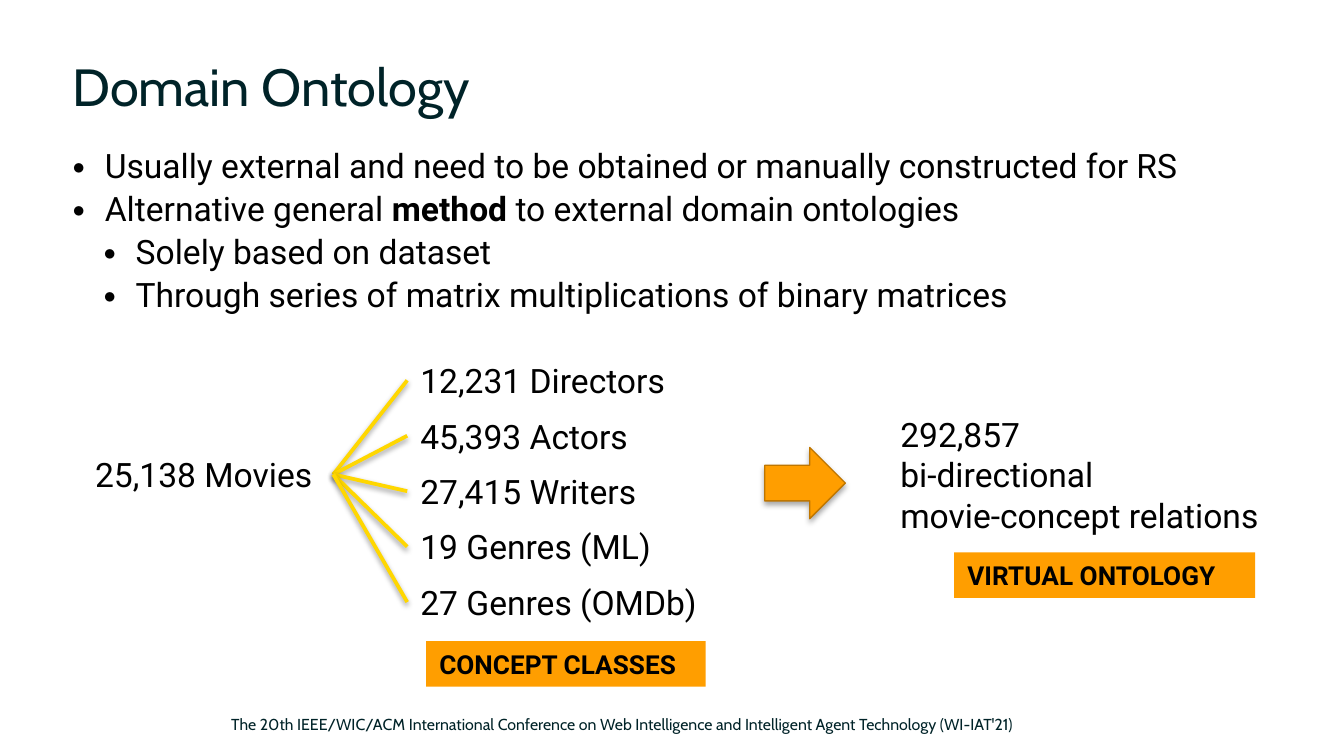
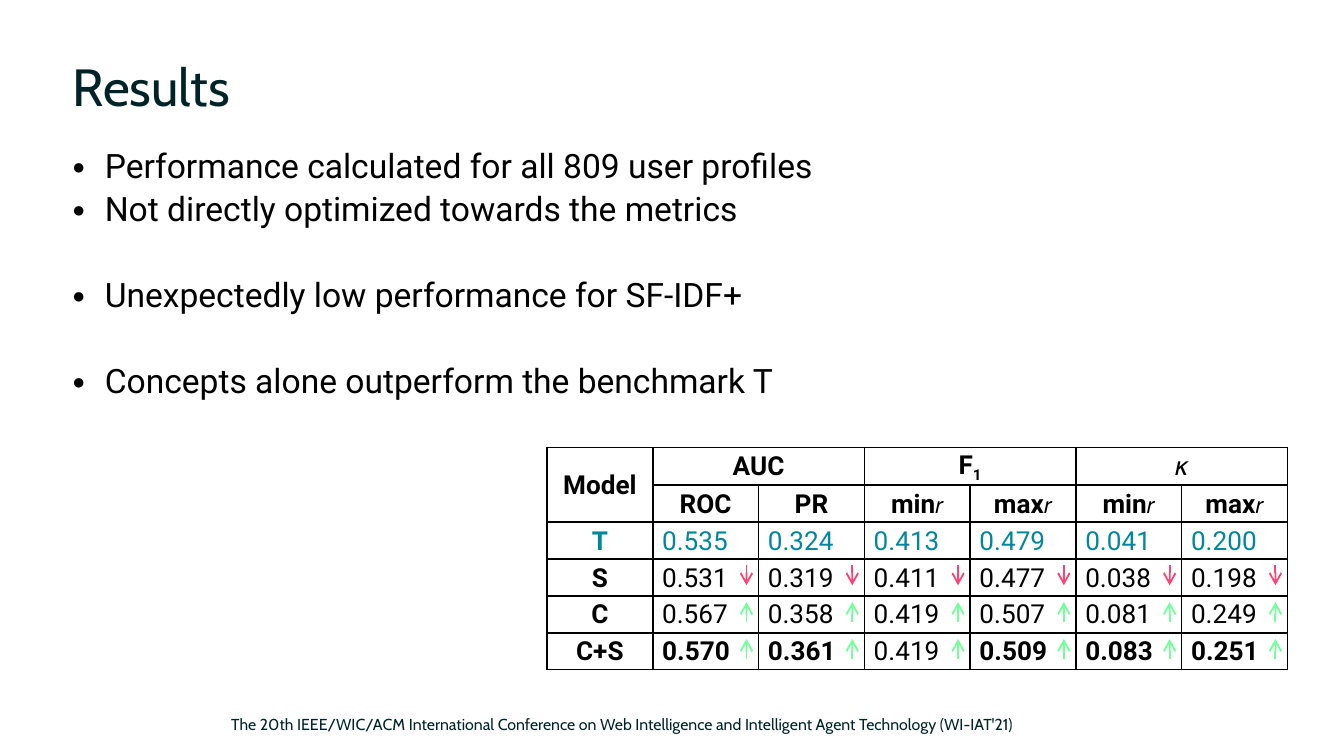
from dataclasses import dataclass

from lxml import etree
from pptx import Presentation
from pptx.dml.color import RGBColor
from pptx.enum.shapes import MSO_CONNECTOR, MSO_SHAPE
from pptx.enum.text import MSO_ANCHOR, PP_ALIGN
from pptx.oxml import parse_xml
from pptx.oxml.ns import nsdecls, qn
from pptx.util import Inches, Pt

STRAIGHT = MSO_CONNECTOR.STRAIGHT
RECT, RIGHT_ARROW = MSO_SHAPE.RECTANGLE, MSO_SHAPE.RIGHT_ARROW
LEFT, CENTER = PP_ALIGN.LEFT, PP_ALIGN.CENTER
TOP, MIDDLE = MSO_ANCHOR.TOP, MSO_ANCHOR.MIDDLE
SIDE_LEFT, SIDE_RIGHT = 1, 3


@dataclass(frozen=True)
class Theme:
    head_font: str = "Cabin"
    body_font: str = "Roboto"
    ink: str = "002328"
    black: str = "000000"
    orange: str = "FF9E00"
    orange_edge: str = "BF7600"
    gold: str = "FFD700"
    teal: str = "00879E"
    worse: str = "FB4476"
    better: str = "74FF9B"
    title: float = 28
    body: float = 18
    label: float = 14
    index: float = 12
    footer: float = 8.5


T = Theme()
FOOTER = ("The 20th IEEE/WIC/ACM International Conference on Web Intelligence "
          "and Intelligent Agent Technology (WI-IAT'21)")
NO_INSET = (0, 0, 0, 0)
LABEL_INSET = (0.1, 0.05, 0.1, 0.05)


# ---- Shared helpers ----
def write(tf, paras, *, size=T.body, color=T.black, font=T.body_font, bold=False,
          align=LEFT, spacing=None, levels=None, gaps=()):
    """Each paragraph is a string or a list of strings and (string, format) pairs."""
    for i, runs in enumerate(paras):
        p = tf.paragraphs[0] if i == 0 else tf.add_paragraph()
        if levels:
            bullet(p, levels[i])
        p.alignment = align
        if spacing:
            p.line_spacing = spacing
        if i in gaps:
            p.space_before = spacing
        for run in [runs] if isinstance(runs, str) else runs:
            words, fmt = (run, {}) if isinstance(run, str) else run
            r = p.add_run()
            r.text = words
            r.font.name = font
            r.font.size = Pt(fmt.get("size", size))
            r.font.bold = fmt.get("bold", bold)
            r.font.color.rgb = RGBColor.from_string(color)
            if "baseline" in fmt:
                r._r.get_or_add_rPr().set("baseline", str(fmt["baseline"] * 1000))


def bullet(p, level):
    p.level = level
    pPr = p._p.get_or_add_pPr()
    pPr.set("marL", str(Inches(0.24 if level == 0 else 0.47)))
    pPr.set("indent", str(Inches(-0.24)))
    etree.SubElement(pPr, qn("a:buSzPct")).set("val", "130000")
    etree.SubElement(pPr, qn("a:buFont")).set("typeface", T.head_font)
    etree.SubElement(pPr, qn("a:buChar")).set("char", "•")


def set_frame(tf, inset, anchor):
    tf.word_wrap = True
    tf.vertical_anchor = anchor
    tf.margin_left, tf.margin_top, tf.margin_right, tf.margin_bottom = map(Inches, inset)


def text_box(s, box, paras, inset=NO_INSET, **fmt):
    sp = s.shapes.add_textbox(*map(Inches, box))
    set_frame(sp.text_frame, inset, TOP)
    write(sp.text_frame, paras, **fmt)
    return sp


def shape(s, kind, box, fill, edge=None):
    sp = s.shapes.add_shape(kind, *map(Inches, box))
    sp.shadow.inherit = False
    sp.fill.solid()
    sp.fill.fore_color.rgb = RGBColor.from_string(fill)
    if edge:
        sp.line.color.rgb = RGBColor.from_string(edge)
        sp.line.width = Pt(0.75)
    else:
        sp.line.fill.background()
    return sp


def line(s, start, end, color, width):
    c = s.shapes.add_connector(STRAIGHT, *map(Inches, (*start, *end)))
    c.line.color.rgb = RGBColor.from_string(color)
    c.line.width = Pt(width)
    etree.SubElement(c._element.spPr, qn("a:effectLst"))
    return c


def drop_shadow(sp, dist, alpha):
    effects = sp._element.spPr.find(qn("a:effectLst"))
    effects.append(parse_xml(
        f'<a:outerShdw {nsdecls("a")} blurRad="{Pt(3.1)}" dist="{Pt(dist)}" '
        f'dir="5400000" rotWithShape="0"><a:srgbClr val="{T.black}">'
        f'<a:alpha val="{alpha * 1000}"/></a:srgbClr></a:outerShdw>'))


def base_slide(prs, title):
    s = prs.slides.add_slide(prs.slide_layouts[6])
    text_box(s, (0.54, 0.43, 8.94, 0.63), [title], size=T.title,
             font=T.head_font, color=T.ink, spacing=Pt(32))
    text_box(s, (1.72, 5.32, 6.49, 0.2), [FOOTER], size=T.footer,
             font=T.head_font, color=T.ink)
    return s


def bullets(s, items, **fmt):
    text_box(s, (0.54, 1.06, 8.94, 3.66), items, spacing=Pt(23), **fmt)


# ---- Ontology diagram ----
def tag(s, box, words):
    sp = shape(s, RECT, box, T.orange)
    set_frame(sp.text_frame, LABEL_INSET, MIDDLE)
    write(sp.text_frame, [words], size=T.label, bold=True)


def concept_fan(s, box, source, concepts):
    """The source label on the left, linked to evenly spaced concept labels."""
    x, y, w, h = box
    label_h = 0.4
    pitch = (h - label_h) / (len(concepts) - 1)
    hub = text_box(s, (x, y + 0.7, 1.87, label_h), [source], LABEL_INSET)
    hub_end, fan_x = (x + 1.87, y + 0.9), x + 2.42
    for i, concept in enumerate(concepts):
        top = y + i * pitch
        label = text_box(s, (fan_x, top, w - 2.42, label_h), [concept], LABEL_INSET)
        link = line(s, hub_end, (fan_x, top + label_h / 2), T.gold, 2)
        link.begin_connect(hub, SIDE_RIGHT)
        link.end_connect(label, SIDE_LEFT)
        drop_shadow(link, 1.6, 38)
    tag(s, (x + 2.56, y + h + 0.09, 2.08, 0.34), "CONCEPT CLASSES")


def virtual_ontology(s, box):
    x, y, w, h = box
    arrow = shape(s, RIGHT_ARROW, (x, y + 0.3, 0.6, 0.53), T.orange, T.orange_edge)
    drop_shadow(arrow, 1.8, 35)
    text_box(s, (x + 0.91, y, w - 0.91, h),
             ["292,857", "bi-directional", "movie-concept relations"], LABEL_INSET)
    tag(s, (x + 1.41, y + h + 0.07, 2.24, 0.34), "VIRTUAL ONTOLOGY")


def ontology_slide(prs):
    s = base_slide(prs, "Domain Ontology")
    bullets(s, [
        "Usually external and need to be obtained or manually constructed for RS",
        ["Alternative general ", ("method", {"bold": True}),
         " to external domain ontologies"],
        "Solely based on dataset",
        "Through series of matrix multiplications of binary matrices",
    ], levels=[0, 0, 1, 1])
    concept_fan(s, (0.61, 2.63, 4.78, 2.05), "25,138 Movies", [
        "12,231 Directors", "45,393 Actors", "27,415 Writers",
        "19 Genres (ML)", "27 Genres (OMDb)"])
    virtual_ontology(s, (5.69, 3.03, 4, 1.01))


# ---- Results table ----
MODELS = {
    "T": ["0.535", "0.324", "0.413", "0.479", "0.041", "0.200"],
    "S": ["0.531", "0.319", "0.411", "0.477", "0.038", "0.198"],
    "C": ["0.567", "0.358", "0.419", "0.507", "0.081", "0.249"],
    "C+S": ["0.570", "0.361", "0.419", "0.509", "0.083", "0.251"],
}
BENCHMARK = "T"
GROUPS = [["AUC"], ["F", ("1", {"baseline": -25})], ["𝜅"]]
MIN_R, MAX_R = ([word, ("𝑟", {"size": T.index})] for word in ("min", "max"))
MEASURES = ["ROC", "PR", MIN_R, MAX_R, MIN_R, MAX_R]


def style_cell(cell):
    cell.margin_left = cell.margin_right = Inches(0.07)
    cell.margin_top = cell.margin_bottom = 0
    cell.vertical_anchor = MIDDLE
    tcPr = cell._tc.get_or_add_tcPr()
    for side in "LRTB":
        tcPr.append(parse_xml(
            f'<a:ln{side} {nsdecls("a")} w="{Pt(1)}"><a:solidFill>'
            f'<a:srgbClr val="{T.black}"/></a:solidFill></a:ln{side}>'))
    cell.fill.background()


def fill_cell(cell, words, **fmt):
    write(cell.text_frame, [words], size=T.label, spacing=1.05, **fmt)


def change_arrow(s, x, top, worse):
    """Points down for a value below the benchmark, up for one above it."""
    ends = [(x, top), (x, top + 0.15)]
    start, end = ends if worse else reversed(ends)
    c = line(s, start, end, T.worse if worse else T.better, 1)
    etree.SubElement(c.line._get_or_add_ln(), qn("a:tailEnd")).set("type", "arrow")


def results_table(s, box):
    x, y, w, h = box
    n_rows, n_cols = len(MODELS) + 2, len(MEASURES) + 1
    col_w, row_h = w / n_cols, h / n_rows
    table = s.shapes.add_table(n_rows, n_cols, *map(Inches, box)).table
    table.first_row = table.horz_banding = False
    for col in table.columns:
        col.width = Inches(col_w)
    for row in table.rows:
        row.height = Inches(row_h)
    for cell in table.iter_cells():
        style_cell(cell)

    # Two header rows
    header = {"bold": True, "align": CENTER}
    table.cell(0, 0).merge(table.cell(1, 0))
    fill_cell(table.cell(0, 0), "Model", **header)
    for i, group in enumerate(GROUPS):
        first = 1 + 2 * i
        table.cell(0, first).merge(table.cell(0, first + 1))
        fill_cell(table.cell(0, first), group, **header)
    for c, measure in enumerate(MEASURES, 1):
        fill_cell(table.cell(1, c), measure, **header)

    # Values: a sole best score is bold, and changes from the benchmark get arrows
    columns = list(zip(*MODELS.values()))
    for r, (model, values) in enumerate(MODELS.items(), 2):
        color = T.teal if model == BENCHMARK else T.black
        fill_cell(table.cell(r, 0), model, color=color, **header)
        for c, (value, column) in enumerate(zip(values, columns), 1):
            best = value == max(column) and column.count(value) == 1
            fill_cell(table.cell(r, c), value, color=color, bold=best)
            if model != BENCHMARK:
                change_arrow(s, x + (c + 1) * col_w - 0.09, y + r * row_h + 0.05,
                             value < MODELS[BENCHMARK][c - 1])


def results_slide(prs):
    s = base_slide(prs, "Results")
    bullets(s, [
        "Performance calculated for all 809 user profiles",
        "Not directly optimized towards the metrics",
        "Unexpectedly low performance for SF-IDF+",
        "Concepts alone outperform the benchmark T",
    ], levels=[0] * 4, gaps=(2, 3))
    results_table(s, (4.07, 3.33, 5.51, 1.65))


def main():
    prs = Presentation()
    prs.slide_width = Inches(10)
    prs.slide_height = prs.slide_width * 9 // 16
    ontology_slide(prs)
    results_slide(prs)
    prs.save("out.pptx")


if __name__ == "__main__":
    main()
